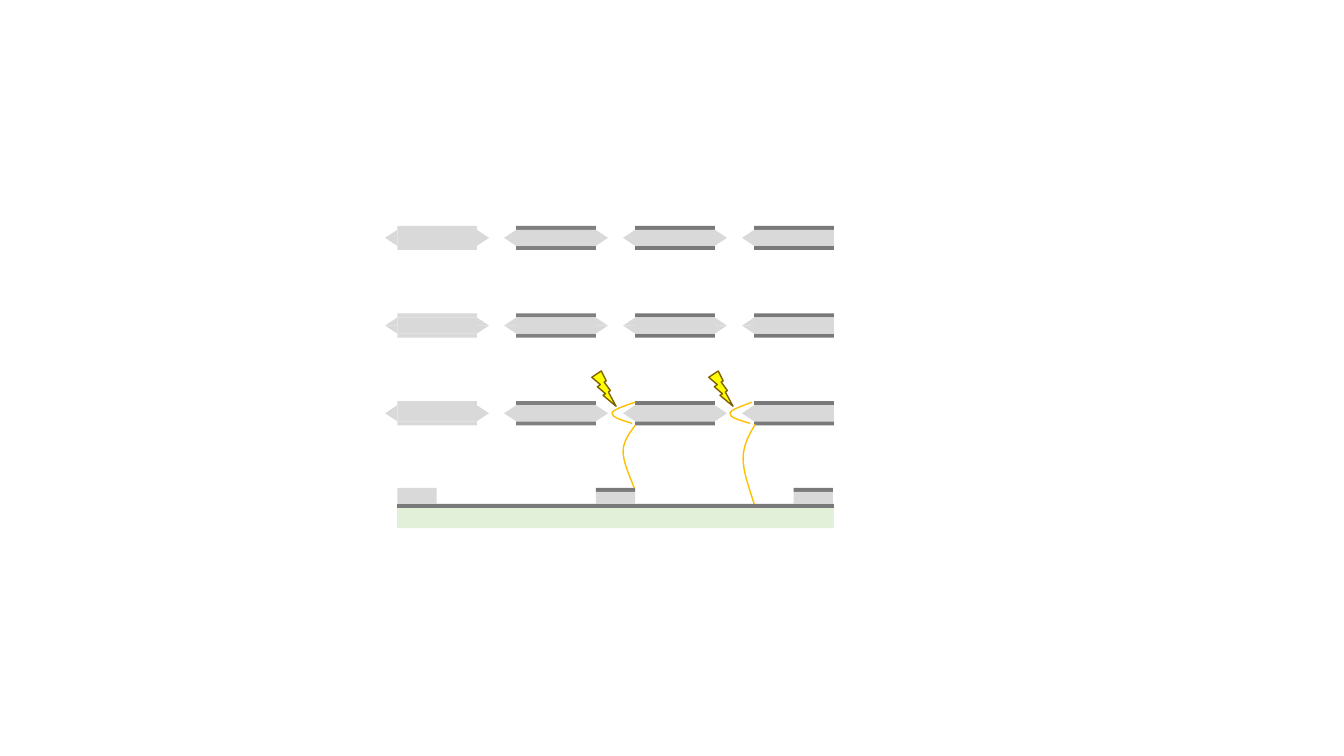
from lxml.etree import SubElement
from pptx import Presentation
from pptx.dml.color import RGBColor
from pptx.enum.shapes import MSO_SHAPE
from pptx.oxml.ns import qn
from pptx.util import Inches, Pt

LIGHT_GRAY = RGBColor(0xD9, 0xD9, 0xD9)
MID_GRAY = RGBColor(0x80, 0x80, 0x80)
DARK_GRAY = RGBColor(0x79, 0x79, 0x79)
PALE_GREEN = RGBColor(0xE2, 0xF0, 0xD9)
YELLOW = RGBColor(0xFF, 0xFF, 0x00)
BROWN = RGBColor(0x80, 0x60, 0x00)
ORANGE = RGBColor(0xFF, 0xC0, 0x00)

# Grid of the stacked cells, in inches
LEFT, TOP = 3.94, 2.24
COLUMN_STEP, ROW_STEP, ROWS = 1.18, 0.87, 3
CELL_WIDTH, CORE_HEIGHT, PLATE = 0.79, 0.16, 0.04
TIP_WIDTH, TIP_HEIGHT = 0.12, 0.08
COLUMN_COLORS = [LIGHT_GRAY, MID_GRAY, DARK_GRAY, DARK_GRAY]
CONTACT_WIDTH, BASE_TOP, BASE_WIDTH = 0.39, 5, 4.33


class Diagram:
    """Holds the current slide and the style of its elements."""

    def __init__(self, slide, line_width=Pt(1)):
        self.slide = slide
        self.line_width = line_width

    def block(self, left, top, width, height, fill, kind=MSO_SHAPE.RECTANGLE,
              line=None, parent=None):
        shapes = (parent or self.slide).shapes
        shape = shapes.add_shape(kind, Inches(left), Inches(top),
                                 Inches(width), Inches(height))
        shape.shadow.inherit = False
        shape.fill.solid()
        shape.fill.fore_color.rgb = fill
        if line is None:
            shape.line.fill.background()
        else:
            shape.line.color.rgb = line
            shape.line.width = self.line_width
        return shape

    def tip(self, left, top, points_left=False):
        """Two mirrored right triangles forming a pointed cell end."""
        group = self.slide.shapes.add_group_shape()
        for half in range(2):
            triangle = self.block(left, top + half * TIP_HEIGHT, TIP_WIDTH, TIP_HEIGHT,
                                  LIGHT_GRAY, MSO_SHAPE.RIGHT_TRIANGLE, parent=group)
            transform = triangle.element.spPr.xfrm
            if points_left:
                transform.set("flipH", "1")
            if half:
                transform.set("flipV", "1")

    def cell(self, left, top, plate_color, right_tip=True):
        core_top = top + PLATE
        for plate_top in (top, core_top + CORE_HEIGHT):
            self.block(left, plate_top, CELL_WIDTH, PLATE, plate_color)
        self.tip(left - TIP_WIDTH, core_top, points_left=True)
        self.block(left, core_top, CELL_WIDTH, CORE_HEIGHT, LIGHT_GRAY)
        if right_tip:
            self.tip(left + CELL_WIDTH, core_top)

    def contact(self, left, plate_color):
        top = BASE_TOP - 0.16
        self.block(left, top, CONTACT_WIDTH, PLATE, plate_color)
        self.block(left, top + PLATE, CONTACT_WIDTH, 0.12, LIGHT_GRAY)

    def bolt(self, left, top):
        self.block(left, top, 0.24, 0.35, YELLOW, MSO_SHAPE.LIGHTNING_BOLT, line=BROWN)

    def curve(self, points):
        """Cubic curve: a start, then two control points and an end per segment."""
        start, *rest = [(Inches(x), Inches(y)) for x, y in points]
        builder = self.slide.shapes.build_freeform(*start)
        builder.add_line_segments(rest, close=False)
        shape = builder.convert_to_shape()
        shape.shadow.inherit = False
        shape.fill.background()
        shape.line.color.rgb = ORANGE
        shape.line.width = self.line_width
        # Turn every three straight steps into one cubic segment
        outline = next(shape.element.iter(qn("a:path")))
        steps = outline.findall(qn("a:lnTo"))
        for first in range(0, len(steps), 3):
            cubic = SubElement(outline, qn("a:cubicBezTo"))
            for step in steps[first:first + 3]:
                cubic.append(step[0])
                outline.remove(step)


def main():
    presentation = Presentation()
    presentation.slide_width = Inches(13.33)
    presentation.slide_height = Inches(7.5)
    diagram = Diagram(presentation.slides.add_slide(presentation.slide_layouts[6]))

    # Rows of cells; the last column is cut off on its right
    for row in range(ROWS):
        for column, color in enumerate(COLUMN_COLORS):
            diagram.cell(LEFT + column * COLUMN_STEP, TOP + row * ROW_STEP, color,
                         right_tip=column < len(COLUMN_COLORS) - 1)

    # Base with its contacts
    diagram.block(LEFT, BASE_TOP, BASE_WIDTH, PLATE, DARK_GRAY)
    diagram.block(LEFT, BASE_TOP + PLATE, BASE_WIDTH, 0.2, PALE_GREEN)
    for left, color in ((LEFT, LIGHT_GRAY), (5.91, DARK_GRAY), (7.87, DARK_GRAY)):
        diagram.contact(left, color)

    # Discharges: bolts and breakdown paths
    for left in (5.87, 7.03):
        diagram.bolt(left, 3.68)
    diagram.curve([(6.3, 3.99), (6.18, 4.03), (6.07, 4.07), (6.07, 4.1),
                   (6.07, 4.14), (6.17, 4.17), (6.27, 4.2)])
    diagram.curve([(6.3, 4.22), (6.24, 4.3), (6.18, 4.38), (6.18, 4.48),
                   (6.18, 4.58), (6.24, 4.71), (6.29, 4.84)])
    diagram.curve([(7.46, 3.99), (7.35, 4.03), (7.24, 4.07), (7.24, 4.1),
                   (7.23, 4.14), (7.34, 4.17), (7.44, 4.2)])
    diagram.curve([(7.49, 4.21), (7.43, 4.31), (7.37, 4.42), (7.37, 4.55),
                   (7.37, 4.68), (7.43, 4.84), (7.48, 5)])

    presentation.save("out.pptx")


if __name__ == "__main__":
    main()
